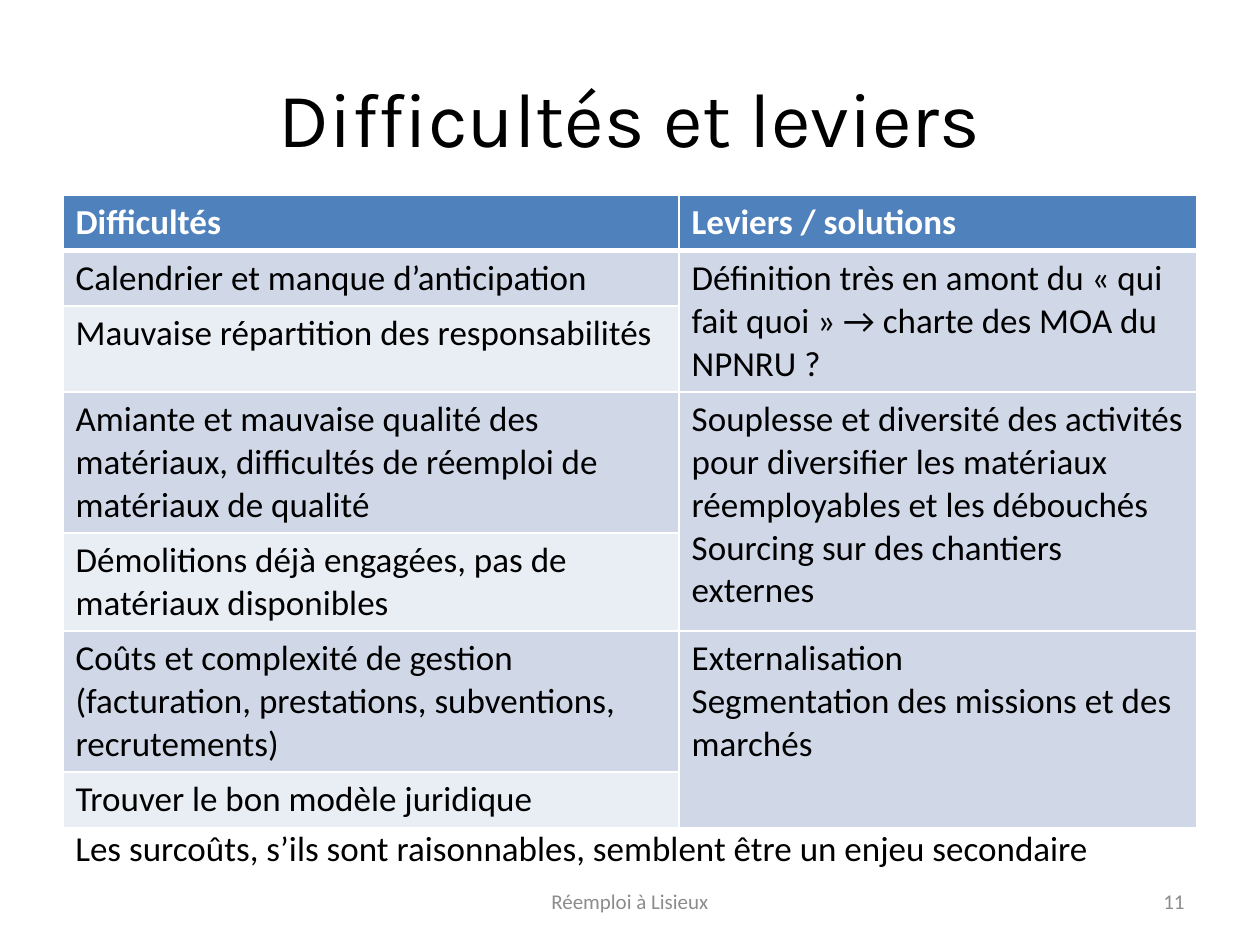
from dataclasses import dataclass

from lxml.etree import SubElement
from pptx import Presentation
from pptx.dml.color import RGBColor
from pptx.enum.text import MSO_ANCHOR, PP_ALIGN
from pptx.oxml.ns import qn
from pptx.util import Inches, Pt


@dataclass(frozen=True)
class Theme:
    title_font: str = "Karla"
    body_font: str = "Calibri"
    title_size: int = 44
    body_size: int = 20
    footer_size: int = 12
    text: str = "000000"
    light: str = "FFFFFF"
    muted: str = "8C8C8C"
    header: str = "4F81BD"
    band_dark: str = "D0D8E8"
    band_light: str = "E9EDF4"
    thin_border: int = 1
    thick_border: int = 3


THEME = Theme()

COLUMN_WIDTHS = [4.89, 4.11]
ROW_HEIGHTS = [0.44, 0.44, 0.68, 1.12, 0.78, 1.12, 0.44]
HEADINGS = ["Difficultés", "Leviers / solutions"]
DIFFICULTIES = [
    "Calendrier et manque d’anticipation",
    "Mauvaise répartition des responsabilités",
    "Amiante et mauvaise qualité des matériaux, difficultés de réemploi de matériaux de qualité",
    "Démolitions déjà engagées, pas de matériaux disponibles",
    "Coûts et complexité de gestion (facturation, prestations, subventions, recrutements)",
    "Trouver le bon modèle juridique",
]
SOLUTIONS = [
    "Définition très en amont du « qui fait quoi » → charte des MOA du NPNRU ?",
    "Souplesse et diversité des activités pour diversifier les matériaux réemployables et les débouchés\n"
    "Sourcing sur des chantiers externes",
    "Externalisation\nSegmentation des missions et des marchés",
]


def write_text(text_frame, text, size, color, font=THEME.body_font, bold=False, alignment=PP_ALIGN.LEFT):
    text_frame.text = text
    for paragraph in text_frame.paragraphs:
        paragraph.alignment = alignment
        for run in paragraph.runs:
            run.font.name = font
            run.font.size = Pt(size)
            run.font.bold = bold
            run.font.color.rgb = RGBColor.from_string(color)


def add_title(slide, box, text):
    title = slide.shapes.title
    title.left, title.top, title.width, title.height = map(Inches, box)
    title.text_frame.vertical_anchor = MSO_ANCHOR.MIDDLE
    write_text(title.text_frame, text, THEME.title_size, THEME.text, THEME.title_font, alignment=PP_ALIGN.CENTER)


def add_text(slide, box, text, size, color, alignment=PP_ALIGN.LEFT, anchor=MSO_ANCHOR.TOP):
    text_frame = slide.shapes.add_textbox(*map(Inches, box)).text_frame
    text_frame.word_wrap = True
    text_frame.vertical_anchor = anchor
    write_text(text_frame, text, size, color, alignment=alignment)


def set_borders(cell, top, bottom):
    properties = cell._tc.get_or_add_tcPr()
    widths = {"lnL": THEME.thin_border, "lnR": THEME.thin_border, "lnT": top, "lnB": bottom}
    for side, width in widths.items():
        line = SubElement(properties, qn(f"a:{side}"), w=str(Pt(width)))
        fill = SubElement(line, qn("a:solidFill"))
        SubElement(fill, qn("a:srgbClr"), val=THEME.light)


def format_cell(cell, row, column):
    set_borders(
        cell,
        top=THEME.thick_border if row == 1 else THEME.thin_border,
        bottom=THEME.thick_border if row == 0 else THEME.thin_border,
    )
    if row == 0:
        color = THEME.header
    elif row % 2 or column == 1:
        color = THEME.band_dark
    else:
        color = THEME.band_light
    cell.fill.solid()
    cell.fill.fore_color.rgb = RGBColor.from_string(color)


def add_comparison_table(slide, box):
    shape = slide.shapes.add_table(len(ROW_HEIGHTS), len(COLUMN_WIDTHS), *map(Inches, box))
    table = shape.table
    for column, width in zip(table.columns, COLUMN_WIDTHS):
        column.width = Inches(width)
    for row, height in zip(table.rows, ROW_HEIGHTS):
        row.height = Inches(height)
    for row in range(len(ROW_HEIGHTS)):
        for column in range(len(COLUMN_WIDTHS)):
            format_cell(table.cell(row, column), row, column)

    for column, heading in enumerate(HEADINGS):
        write_text(table.cell(0, column).text_frame, heading, THEME.body_size, THEME.light, bold=True)
    for row, difficulty in enumerate(DIFFICULTIES, start=1):
        write_text(table.cell(row, 0).text_frame, difficulty, THEME.body_size, THEME.text)
    for index, solution in enumerate(SOLUTIONS):
        first_row = 1 + 2 * index
        cell = table.cell(first_row, 1)
        cell.merge(table.cell(first_row + 1, 1))
        write_text(cell.text_frame, solution, THEME.body_size, THEME.text)


def add_footer(slide, box, text, number):
    left, top, width, height = box
    number_width = 2.33
    number_box = (left + width - number_width, top, number_width, height)
    text_width = 3.17
    text_box = (left + (width - text_width) / 2, top, text_width, height)
    parts = [(text_box, text, PP_ALIGN.CENTER), (number_box, number, PP_ALIGN.RIGHT)]
    for part_box, content, alignment in parts:
        add_text(slide, part_box, content, THEME.footer_size, THEME.muted, alignment, MSO_ANCHOR.MIDDLE)


def main():
    presentation = Presentation()
    presentation.slide_width = Inches(10)
    presentation.slide_height = Inches(7.5)
    slide = presentation.slides.add_slide(presentation.slide_layouts[5])
    add_title(slide, (0.5, 0.3, 9, 1.25), "Difficultés et leviers")
    add_text(
        slide,
        (0.5, 6.51, 9, 0.55),
        "Les surcoûts, s’ils sont raisonnables, semblent être un enjeu secondaire",
        THEME.body_size,
        THEME.text,
    )
    add_footer(slide, (0.5, 6.95, 9, 0.4), "Réemploi à Lisieux", "11")
    add_comparison_table(slide, (0.5, 1.55, 9, sum(ROW_HEIGHTS)))
    presentation.save("out.pptx")


if __name__ == "__main__":
    main()
